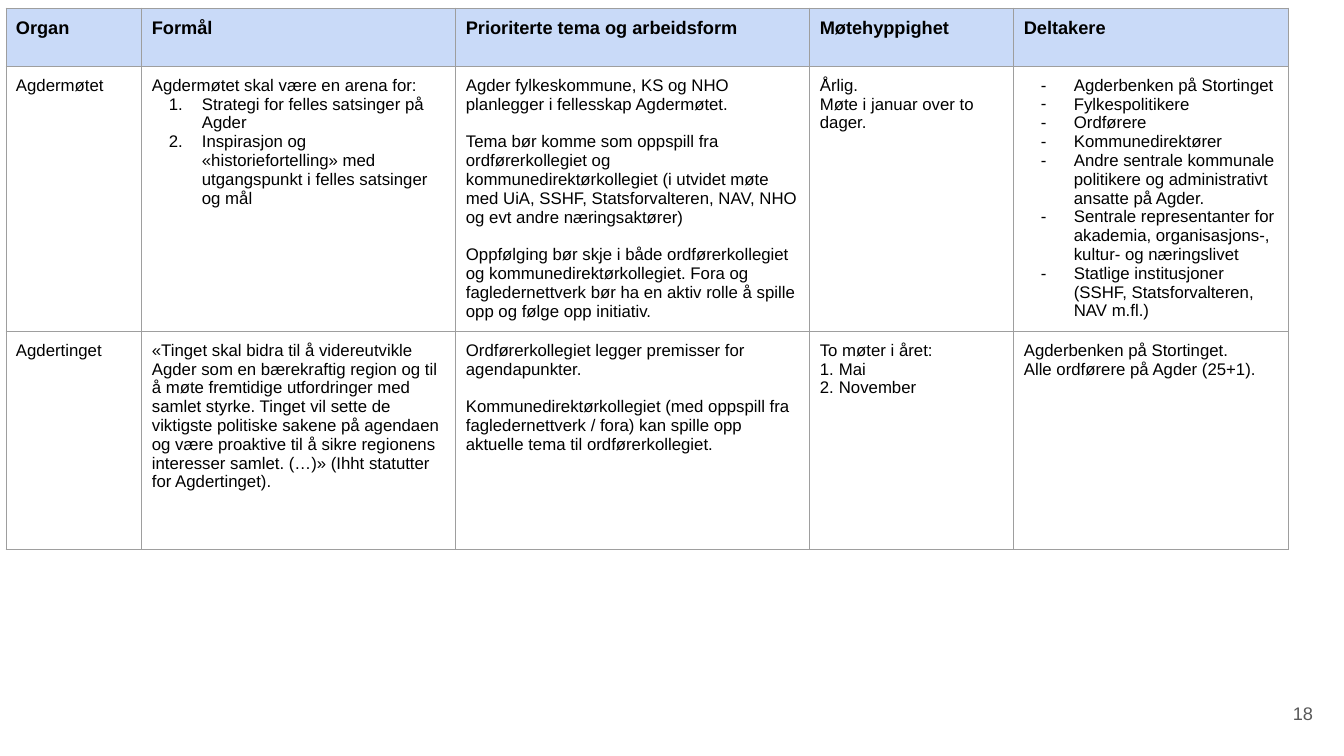
from lxml.etree import SubElement
from pptx import Presentation
from pptx.dml.color import RGBColor as RGB
from pptx.enum.text import MSO_ANCHOR as Anchor, PP_ALIGN as Align
from pptx.oxml.ns import qn
from pptx.util import Emu, Pt

THEME = {
    "font": "Arial",
    "text": "000000", "header_fill": "C9DAF8", "border": "9E9E9E", "number": "595959",
    "header_size": 13, "body_size": 12, "number_size": 13, "border_width": 0.75,
}
NUMBERED = ("buAutoNum", {"type": "arabicPeriod"})
DASHED = ("buChar", {"char": "-"})
# Paragraph kinds: space before, left margin, first-line indent, bullet
KINDS = {
    "plain": (0, 0, 0, None),
    "block": (19, 0, 0, None),
    "number": (0, 50, -33, NUMBERED),
    "tight number": (0, 19, -19, NUMBERED),
    "dash": (0, 50, -33, DASHED),
}
COLUMNS = {
    "Organ": 136, "Formål": 314, "Prioriterte tema og arbeidsform": 354,
    "Møtehyppighet": 204, "Deltakere": 275,
}
ROW_HEIGHTS = [58, 265, 218]

# Each cell is a list of (kind, paragraphs) groups
BODY = [
    [
        [("plain", ["Agdermøtet"])],
        [("plain", ["Agdermøtet skal være en arena for:"]),
         ("number", [
             "Strategi for felles satsinger på Agder",
             "Inspirasjon og «historiefortelling» med utgangspunkt i felles satsinger og mål"])],
        [("plain", ["Agder fylkeskommune, KS og NHO planlegger i fellesskap Agdermøtet."]),
         ("block", [
             "Tema bør komme som oppspill fra ordførerkollegiet og kommunedirektørkollegiet "
             "(i utvidet møte med UiA, SSHF, Statsforvalteren, NAV, NHO og evt andre næringsaktører)",
             "Oppfølging bør skje i både ordførerkollegiet og kommunedirektørkollegiet. Fora og "
             "fagledernettverk bør ha en aktiv rolle å spille opp og følge opp initiativ."])],
        [("plain", ["Årlig.", "Møte i januar over to dager."])],
        [("dash", [
            "Agderbenken på Stortinget", "Fylkespolitikere", "Ordførere", "Kommunedirektører",
            "Andre sentrale kommunale politikere og administrativt ansatte på Agder.",
            "Sentrale representanter for akademia, organisasjons-, kultur- og næringslivet",
            "Statlige institusjoner (SSHF, Statsforvalteren, NAV m.fl.)"])],
    ],
    [
        [("plain", ["Agdertinget"])],
        [("plain", [
            "«Tinget skal bidra til å videreutvikle Agder som en bærekraftig region og til å møte "
            "fremtidige utfordringer med samlet styrke. Tinget vil sette de viktigste politiske "
            "sakene på agendaen og være proaktive til å sikre regionens interesser samlet. (…)» "
            "(Ihht statutter for Agdertinget)."])],
        [("plain", ["Ordførerkollegiet legger premisser for agendapunkter."]),
         ("block", [
             "Kommunedirektørkollegiet (med oppspill fra fagledernettverk / fora) kan spille opp "
             "aktuelle tema til ordførerkollegiet."])],
        [("plain", ["To møter i året:"]), ("tight number", ["Mai", "November"])],
        [("plain", ["Agderbenken på Stortinget.", "Alle ordførere på Agder (25+1)."])],
    ],
]


def px(n):
    return Emu(round(n * 914400 / 100.8))


def add_text(p, text, size, color, bold=False):
    r = p.add_run()
    r.text = text
    for name, value in {"name": THEME["font"], "size": Pt(size), "bold": bold}.items():
        setattr(r.font, name, value)
    r.font.color.rgb = RGB.from_string(color)


prs = Presentation()
prs.slide_width, prs.slide_height = px(1344), px(756)
s = prs.slides.add_slide(prs.slide_layouts[6])

table = s.shapes.add_table(len(ROW_HEIGHTS), len(COLUMNS), px(6), px(8),
                           px(sum(COLUMNS.values())), px(sum(ROW_HEIGHTS))).table
table.horz_banding = False
for column, width in zip(table.columns, COLUMNS.values()):
    column.width = px(width)
for row, height in zip(table.rows, ROW_HEIGHTS):
    row.height = px(height)

header = [[("plain", [name])] for name in COLUMNS]
for row, contents in enumerate([header, *BODY]):
    is_header = row == 0
    size = THEME["header_size" if is_header else "body_size"]
    for col, groups in enumerate(contents):
        cell = table.cell(row, col)
        for side in ("left", "top", "right", "bottom"):
            setattr(cell, f"margin_{side}", px(10))

        tcPr = cell._tc.get_or_add_tcPr()
        for edge in ("lnL", "lnR", "lnT", "lnB"):
            ln = SubElement(tcPr, qn(f"a:{edge}"), w=str(Pt(THEME["border_width"])))
            SubElement(SubElement(ln, qn("a:solidFill")), qn("a:srgbClr"), val=THEME["border"])
        if is_header:
            cell.fill.solid()
            cell.fill.fore_color.rgb = RGB.from_string(THEME["header_fill"])
        else:
            cell.fill.background()

        tf = cell.text_frame
        paragraphs = [(kind, text) for kind, texts in groups for text in texts]
        for i, (kind, text) in enumerate(paragraphs):
            p = tf.add_paragraph() if i else tf.paragraphs[0]
            before, margin, indent, bullet = KINDS[kind]
            if bullet:
                tag, attributes = bullet
                pPr = p._p.get_or_add_pPr()
                pPr.set("marL", str(px(margin)))
                pPr.set("indent", str(px(indent)))
                SubElement(pPr, qn("a:buFont"), typeface=THEME["font"])
                SubElement(pPr, qn(f"a:{tag}"), attributes)
            if before:
                p.space_before = px(before)
            add_text(p, text, size, THEME["text"], is_header)

number_box = s.shapes.add_textbox(px(1245), px(685), px(81), px(57))
tf = number_box.text_frame
tf.word_wrap = True
tf.vertical_anchor = Anchor.MIDDLE
for side in ("left", "top", "right", "bottom"):
    setattr(tf, f"margin_{side}", px(13))
p = tf.paragraphs[0]
p.alignment = Align.RIGHT
add_text(p, "18", THEME["number_size"], THEME["number"])

prs.save("out.pptx")
